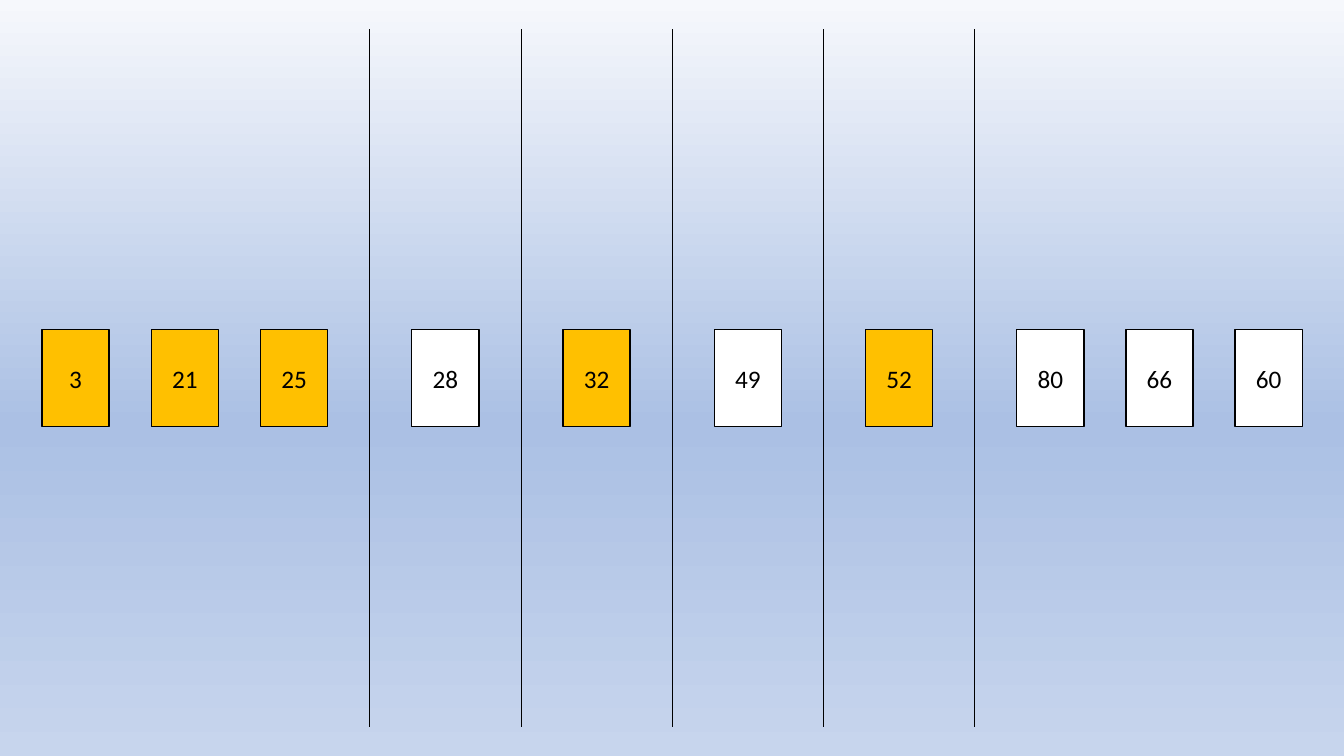
from copy import deepcopy
from dataclasses import dataclass

from pptx import Presentation
from pptx.dml.color import RGBColor
from pptx.enum.shapes import MSO_CONNECTOR, MSO_SHAPE
from pptx.enum.text import MSO_ANCHOR, PP_ALIGN
from pptx.oxml.ns import qn
from pptx.util import Inches, Pt

RECTANGLE = MSO_SHAPE.RECTANGLE
STRAIGHT = MSO_CONNECTOR.STRAIGHT
MIDDLE = MSO_ANCHOR.MIDDLE
CENTER = PP_ALIGN.CENTER


@dataclass(frozen=True)
class Theme:
    font: str = "Calibri"
    number_size: Pt = Pt(18)
    ink: RGBColor = RGBColor(0x00, 0x00, 0x00)
    orange: RGBColor = RGBColor(0xFF, 0xC0, 0x00)
    white: RGBColor = RGBColor(0xFF, 0xFF, 0xFF)
    card_line: Pt = Pt(1)
    divider_line: Pt = Pt(0.5)
    background: tuple = ((0, "F6F8FC"), (0.56, "ABC0E4"), (1, "C7D5ED"))


THEME = Theme()

SLIDE_WIDTH, SLIDE_HEIGHT = 13.33, 7.5
CARD_WIDTH, CARD_HEIGHT = 2 / 3, 0.96
CARD_TOP = (SLIDE_HEIGHT - CARD_HEIGHT) / 2
GAP = 5 / 12
DIVIDER_MARGIN = 0.29

# Each group of cards stands between two dividers.
CARD_GROUPS = (
    (THEME.orange, ("3", "21", "25")),
    (THEME.white, ("28",)),
    (THEME.orange, ("32",)),
    (THEME.white, ("49",)),
    (THEME.orange, ("52",)),
    (THEME.white, ("80", "66", "60")),
)


def set_gradient_background(slide):
    fill = slide.background.fill
    fill.gradient()
    fill.gradient_angle = 270  # counter-clockwise, so top to bottom
    stop_list = slide.element.find(".//" + qn("a:gsLst"))
    for _ in range(len(THEME.background) - len(stop_list)):
        stop_list.append(deepcopy(stop_list[-1]))
    for stop, (position, color) in zip(fill.gradient_stops, THEME.background):
        stop.position = position
        stop.color.rgb = RGBColor.from_string(color)


def add_card(slide, left, number, color):
    card = slide.shapes.add_shape(
        RECTANGLE, Inches(left), Inches(CARD_TOP), Inches(CARD_WIDTH), Inches(CARD_HEIGHT)
    )
    card.shadow.inherit = False
    card.fill.solid()
    card.fill.fore_color.rgb = color
    card.line.color.rgb = THEME.ink
    card.line.width = THEME.card_line
    card.text_frame.vertical_anchor = MIDDLE
    paragraph = card.text_frame.paragraphs[0]
    paragraph.alignment = CENTER
    run = paragraph.add_run()
    run.text = number
    run.font.name = THEME.font
    run.font.size = THEME.number_size
    run.font.color.rgb = THEME.ink


def add_divider(slide, left):
    divider = slide.shapes.add_connector(
        STRAIGHT,
        Inches(left),
        Inches(DIVIDER_MARGIN),
        Inches(left),
        Inches(SLIDE_HEIGHT - DIVIDER_MARGIN),
    )
    divider.line.color.rgb = THEME.ink
    divider.line.width = THEME.divider_line
    properties = divider.element.spPr
    properties.append(properties.makeelement(qn("a:effectLst"), {}))


def add_card_row(slide):
    """Place the cards left to right, with a divider between groups."""
    left = 0
    for index, (color, numbers) in enumerate(CARD_GROUPS):
        if index:
            add_divider(slide, left)
        left += GAP
        for number in numbers:
            add_card(slide, left, number, color)
            left += CARD_WIDTH + GAP


def main():
    presentation = Presentation()
    presentation.slide_width = Inches(SLIDE_WIDTH)
    presentation.slide_height = Inches(SLIDE_HEIGHT)
    slide = presentation.slides.add_slide(presentation.slide_layouts[6])
    set_gradient_background(slide)
    add_card_row(slide)
    presentation.save("out.pptx")


if __name__ == "__main__":
    main()
